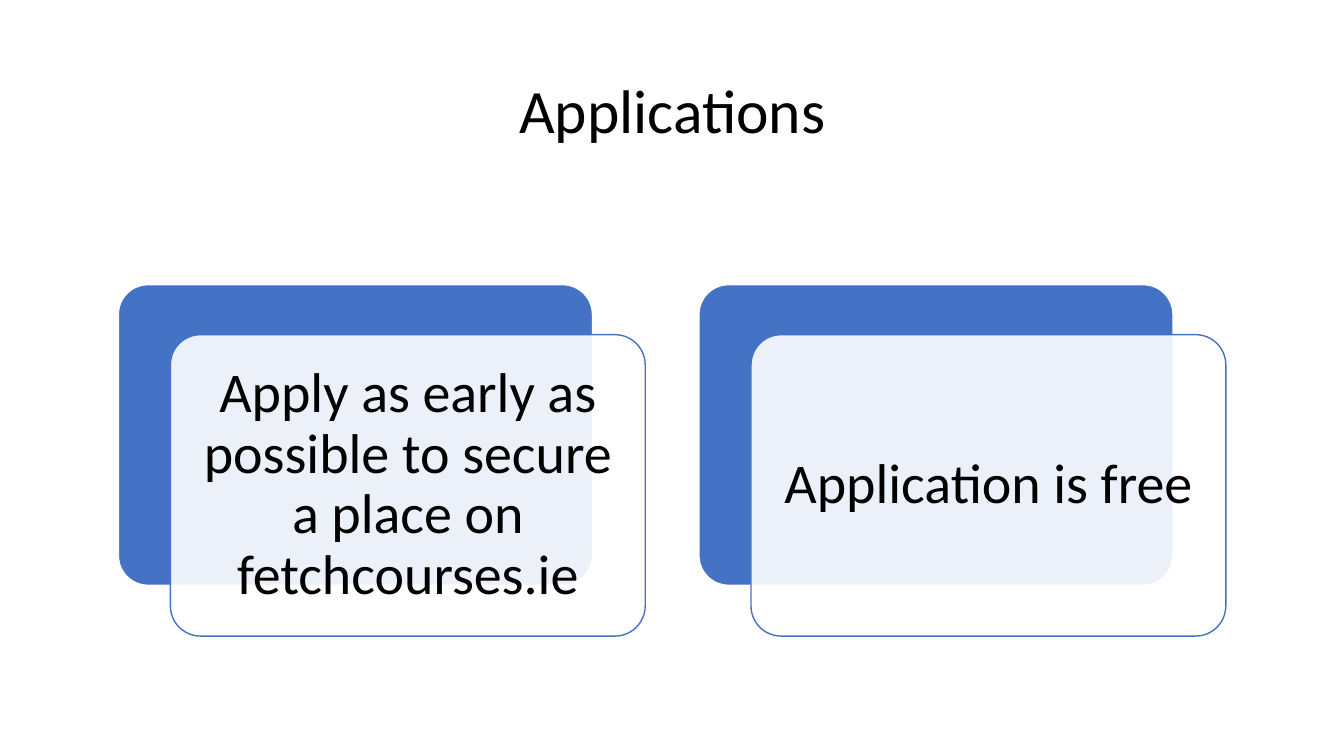
from dataclasses import dataclass

from lxml import etree
from pptx import Presentation
from pptx.dml.color import RGBColor
from pptx.enum.shapes import MSO_SHAPE
from pptx.enum.text import MSO_ANCHOR, PP_ALIGN
from pptx.oxml.ns import qn
from pptx.slide import Slide
from pptx.util import Inches, Pt

ROUNDED = MSO_SHAPE.ROUNDED_RECTANGLE
MIDDLE = MSO_ANCHOR.MIDDLE
CENTER = PP_ALIGN.CENTER

SLIDE_WIDTH, SLIDE_HEIGHT = 13.33, 7.5
COLUMN, ROW = SLIDE_WIDTH / 100, SLIDE_HEIGHT / 100
FONT = "Calibri"
COLORS = {"blue": "4472C4", "white": "FFFFFF", "black": "000000"}


@dataclass(frozen=True)
class Area:
    """A rectangle on a grid of 100 columns by 100 rows."""

    column: float
    row: float
    columns: float
    rows: float

    def moved(self, columns: float, rows: float) -> "Area":
        """Return this area shifted across the grid."""
        return Area(self.column + columns, self.row + rows, self.columns, self.rows)

    def inset(self, columns: float, rows: float) -> "Area":
        """Return this area shrunk equally from opposite sides."""
        return Area(self.column + columns, self.row + rows,
                    self.columns - 2 * columns, self.rows - 2 * rows)

    def lengths(self) -> tuple[int, int, int, int]:
        """Return left, top, width and height as slide lengths."""
        return (Inches(self.column * COLUMN), Inches(self.row * ROW),
                Inches(self.columns * COLUMN), Inches(self.rows * ROW))


@dataclass(frozen=True)
class Panel:
    """A rounded panel's paint."""

    fill: str
    opacity: int
    line: str
    line_width: float


TITLE_AREA = Area(6.9, 5.33, 86.27, 19.33)
FIRST_BACKDROP = Area(8.78, 37.6, 35.33, 39.87)
MESSAGE_PITCH = 43.2
CARD_SHIFT = (3.9, 6.67)
CARD_INSET = (0.66, 1.15)
BACKDROP = Panel("blue", 100, "white", 1.5)
CARD = Panel("white", 90, "blue", 1)
MESSAGES = (
    "Apply as early as possible to secure a place on fetchcourses.ie",
    "Application is free",
)


def add_panel(slide: Slide, area: Area, panel: Panel) -> None:
    """Draw a rounded panel."""
    shape = slide.shapes.add_shape(ROUNDED, *area.lengths())
    shape.adjustments[0] = 0.1
    shape.shadow.inherit = False
    shape.fill.solid()
    shape.fill.fore_color.rgb = RGBColor.from_string(COLORS[panel.fill])
    shape.line.color.rgb = RGBColor.from_string(COLORS[panel.line])
    shape.line.width = Pt(panel.line_width)
    if panel.opacity < 100:
        paint = shape.fill._xPr.find(qn("a:solidFill"))[0]
        etree.SubElement(paint, qn("a:alpha"), val=str(panel.opacity * 1000))


def add_text(slide: Slide, area: Area, words: str, size: int, margin: float) -> None:
    """Write centred text in an area."""
    frame = slide.shapes.add_textbox(*area.lengths()).text_frame
    frame.word_wrap = True
    frame.vertical_anchor = MIDDLE
    frame.margin_left = frame.margin_right = Inches(margin)
    frame.margin_top = frame.margin_bottom = Inches(margin)
    paragraph = frame.paragraphs[0]
    paragraph.alignment = CENTER
    paragraph.line_spacing = 0.9
    run = paragraph.add_run()
    run.text = words
    run.font.name = FONT
    run.font.size = Pt(size)
    run.font.color.rgb = RGBColor.from_string(COLORS["black"])


def main() -> None:
    """Build the applications slide."""
    deck = Presentation()
    deck.slide_width = Inches(SLIDE_WIDTH)
    deck.slide_height = Inches(SLIDE_HEIGHT)
    slide = deck.slides.add_slide(deck.slide_layouts[6])
    add_text(slide, TITLE_AREA, "Applications", 44, 0.1)
    for index, message in enumerate(MESSAGES):
        backdrop = FIRST_BACKDROP.moved(index * MESSAGE_PITCH, 0)
        card = backdrop.moved(*CARD_SHIFT)
        add_panel(slide, backdrop, BACKDROP)
        add_panel(slide, card, CARD)
        add_text(slide, card.inset(*CARD_INSET), message, 40, 0.17)
    deck.save("out.pptx")


if __name__ == "__main__":
    main()
